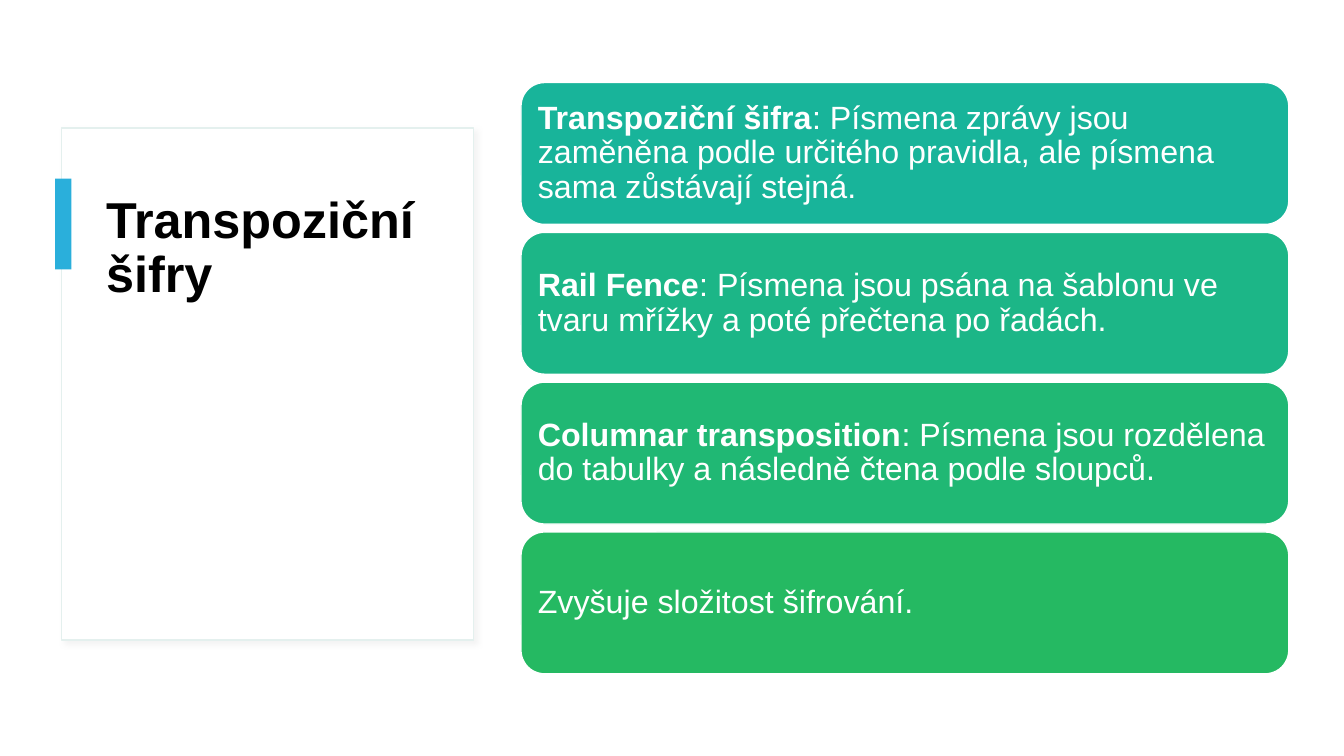
from lxml.etree import SubElement
from pptx import Presentation
from pptx.dml.color import RGBColor
from pptx.enum.shapes import MSO_SHAPE as Shape
from pptx.enum.text import MSO_ANCHOR as Anchor, MSO_AUTO_SIZE as Fit, PP_ALIGN as Align
from pptx.oxml.ns import qn
from pptx.util import Cm, Pt

WHITE = RGBColor(0xFF, 0xFF, 0xFF)
BLACK = RGBColor(0, 0, 0)
MIST = RGBColor(0xE4, 0xF0, 0xEE)
GREY = RGBColor(0xD9, 0xD9, 0xD9)
BLUE = RGBColor(0x2A, 0xAF, 0xDB)
GREENS = [
    RGBColor(0x18, 0xB4, 0x9A),
    RGBColor(0x1C, 0xB6, 0x87),
    RGBColor(0x20, 0xB8, 0x74),
    RGBColor(0x25, 0xB9, 0x62),
]
FONT = "Arial"
TITLE = "Transpoziční šifry"
NOTES = [
    ("Transpoziční šifra", ": Písmena zprávy jsou zaměněna podle určitého pravidla, "
     "ale písmena sama zůstávají stejná."),
    ("Rail Fence", ": Písmena jsou psána na šablonu ve tvaru mřížky "
     "a poté přečtena po řadách."),
    ("Columnar transposition", ": Písmena jsou rozdělena do tabulky "
     "a následně čtena podle sloupců."),
    ("", "Zvyšuje složitost šifrování."),
]


def add_box(slide, kind, box, fill, edge=None):
    shape = slide.shapes.add_shape(kind, *box)
    shape.shadow.inherit = False
    shape.fill.solid()
    shape.fill.fore_color.rgb = fill
    if edge is None:
        shape.line.fill.background()
    else:
        shape.line.color.rgb = edge
        shape.line.width = Pt(1)
    return shape


def add_shade(shape):
    """Give the shape a faint shadow to the lower right."""
    effects = shape._element.spPr.find(qn("a:effectLst"))
    shade = SubElement(effects, qn("a:outerShdw"), blurRad=str(Pt(4)),
                       dist=str(Pt(3)), dir=str(45 * 60000))
    color = SubElement(shade, qn("a:srgbClr"), val=str(GREY))
    SubElement(color, qn("a:alpha"), val="30000")


def style(par, size, color):
    par.alignment = Align.LEFT
    par.line_spacing = 0.9
    par.font.name = FONT
    par.font.size = Pt(size)
    par.font.color.rgb = color


def add_panel(slide, left, top, width, height):
    """Place the framed card with its title and blue marker."""
    card = add_box(slide, Shape.RECTANGLE, (left, top, width, height), WHITE, MIST)
    add_shade(card)
    title = slide.shapes.title
    title._element.addprevious(card._element)
    title.left, title.top = left + Cm(0.87), top + Cm(1.55)
    title.width, title.height = width - Cm(1.78), height - Cm(3.12)
    frame = title.text_frame
    frame.text = TITLE
    frame.word_wrap = True
    frame.auto_size = Fit.NONE
    frame.vertical_anchor = Anchor.TOP
    par = frame.paragraphs[0]
    style(par, 36, BLACK)
    par.font.bold = True
    mark = (left - Cm(0.16), top + Cm(1.27), Cm(0.41), Cm(2.29))
    add_box(slide, Shape.RECTANGLE, mark, BLUE)


def add_notes(slide, left, top, width, height):
    """Stack the rounded notes evenly down the box."""
    gap = Cm(0.2)
    tall = (height - gap * (len(NOTES) - 1)) // len(NOTES)
    for row, ((term, text), fill) in enumerate(zip(NOTES, GREENS)):
        box = (left, top + row * (tall + gap), width, tall)
        note = add_box(slide, Shape.ROUNDED_RECTANGLE, box, fill, WHITE)
        frame = note.text_frame
        frame.word_wrap = True
        frame.vertical_anchor = Anchor.MIDDLE
        frame.margin_left = frame.margin_right = Cm(0.25)
        frame.margin_top = frame.margin_bottom = Cm(0.25)
        par = frame.paragraphs[0]
        style(par, 23, WHITE)
        if term:
            run = par.add_run()
            run.text = term
            run.font.bold = True
        par.add_run().text = text


def main():
    deck = Presentation()
    deck.slide_width, deck.slide_height = Cm(33.87), Cm(19.05)
    slide = deck.slides.add_slide(deck.slide_layouts.get_by_name("Title Only"))
    add_panel(slide, Cm(1.55), Cm(3.23), Cm(10.39), Cm(12.9))
    add_notes(slide, Cm(13.13), Cm(2.08), Cm(19.35), Cm(14.9))
    deck.save("out.pptx")


if __name__ == "__main__":
    main()
